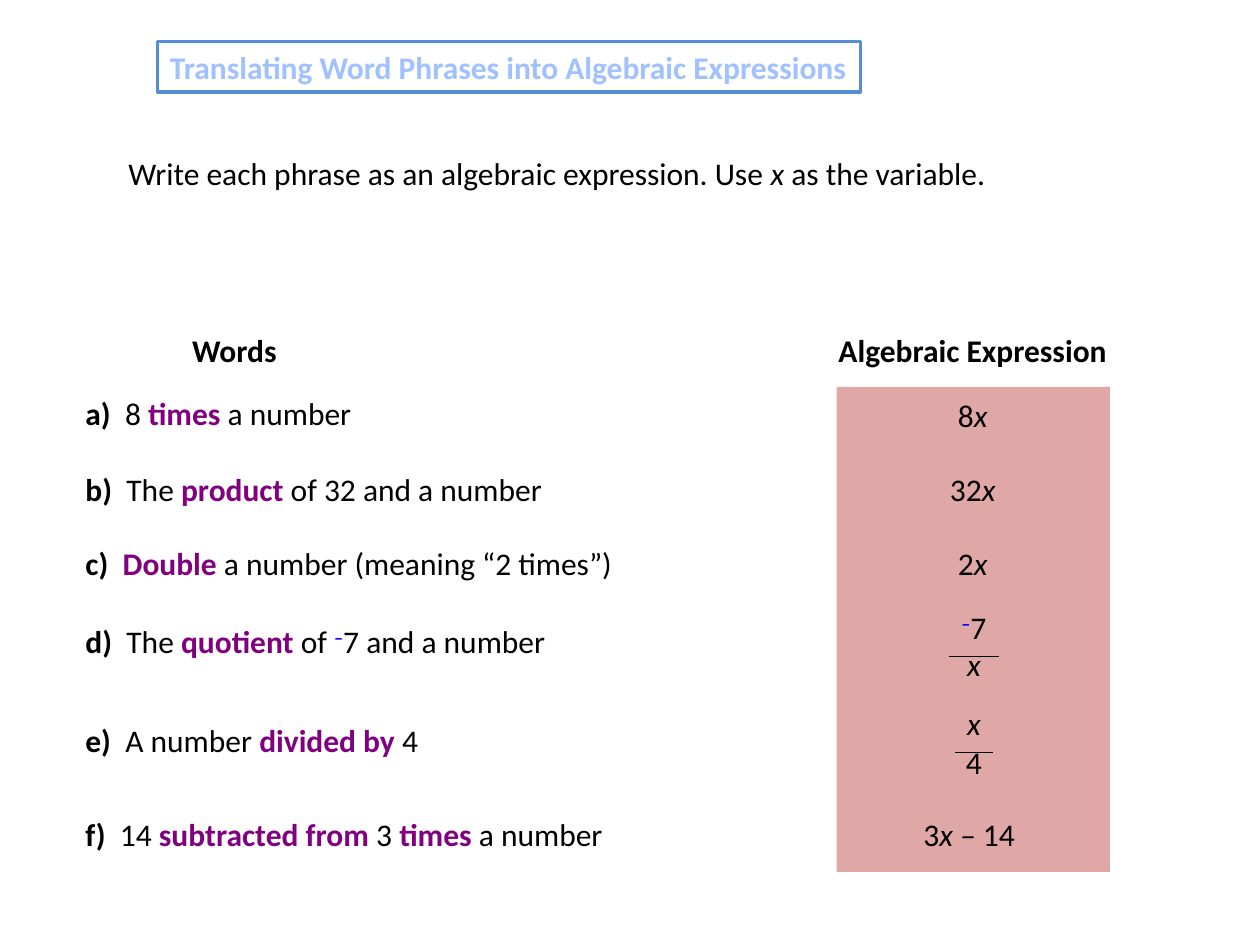
from collections import namedtuple

from lxml import etree
from pptx import Presentation
from pptx.dml.color import RGBColor
from pptx.enum.shapes import MSO_CONNECTOR as Connector, MSO_SHAPE as Shape
from pptx.enum.text import MSO_AUTO_SIZE as AutoSize, PP_ALIGN as Align
from pptx.oxml.ns import qn
from pptx.util import Inches, Pt

# The page is a grid of one-inch columns and rows.
COLUMNS, ROWS = 10, 7.5
Box = namedtuple("Box", "left top width height")

BLACK, PURPLE, BLUE = "000000", "800080", "0000FF"
STYLES = {
    "plain": {},
    "bold": {"bold": True},
    "key": {"bold": True, "color": PURPLE},
    "var": {"italic": True},
    "minus": {"bold": True, "color": BLUE, "raised": True},
    "title": {"bold": True, "color": "A0C1FF"},
}
NEGATIVE_SEVEN = [("–", "minus"), ("7", "plain")]

# Each phrase: its row on the grid, then the spans after its letter.
PHRASES = [
    (3.08, [("8 ", "plain"), ("times ", "key"), ("a number", "plain")]),
    (3.68, [("The ", "plain"), ("product", "key"),
            (" of 32 and a number", "plain")]),
    (4.27, [("Double", "key"), (" a number (meaning “2 times”)", "plain")]),
    (4.89, [("The ", "plain"), ("quotient ", "key"), ("of ", "plain"),
            ("–", "minus"), ("7 and a number", "plain")]),
    (5.67, [("A number ", "plain"), ("divided by ", "key"), ("4", "plain")]),
    (6.42, [("14 ", "plain"), ("subtracted from ", "key"), ("3 ", "plain"),
            ("times ", "key"), ("a number", "plain")]),
]
EXPRESSIONS = [
    (3.09, [("8", "plain"), ("x", "var")]),
    (3.68, [("32", "plain"), ("x", "var")]),
    (4.27, [("2", "plain"), ("x", "var")]),
    (6.42, [("3", "plain"), ("x –", "var"), (" 14 ", "plain")]),
]
# Each fraction: top row, bar row, denominator row, bar width, two parts.
FRACTIONS = [
    (4.78, 5.21, 5.07, 0.4, NEGATIVE_SEVEN, [("x", "var")]),
    (5.54, 5.97, 5.85, 0.3, [("x", "var")], [("4", "plain")]),
]


def rgb(value):
    return RGBColor.from_string(value)


def emu(box):
    return [Inches(length) for length in box]


def write_spans(para, spans):
    for text, style in spans:
        span = para.add_run()
        span.text = text
        look = {"name": "Calibri", "size": Pt(18), "bold": False,
                "italic": False, **STYLES[style]}
        span.font.color.rgb = rgb(look.pop("color", BLACK))
        if look.pop("raised", False):
            span.font._element.set("baseline", "30000")
        for name, value in look.items():
            setattr(span.font, name, value)


def add_text(shapes, box, spans, align=Align.LEFT):
    """Add one line of text with a hanging indent."""
    frame = shapes.add_textbox(*emu(box)).text_frame
    frame.word_wrap = True
    frame.auto_size = AutoSize.NONE
    para = frame.paragraphs[0]
    para.alignment = align
    props = para._p.get_or_add_pPr()
    props.set("marL", str(Inches(0.67)))
    props.set("indent", str(-Inches(0.67)))
    before = etree.SubElement(props, qn("a:spcBef"))
    etree.SubElement(before, qn("a:spcPct")).set("val", "20000")
    write_spans(para, spans)


def add_title(page, box):
    title = page.shapes.add_shape(Shape.RECTANGLE, *emu(box))
    title.shadow.inherit = False
    title.fill.solid()
    title.fill.fore_color.rgb = rgb("FFFFFF")
    title.line.color.rgb = rgb("558ED5")
    title.line.width = Pt(2)
    frame = title.text_frame
    frame.word_wrap = True
    frame.auto_size = AutoSize.SHAPE_TO_FIT_TEXT
    para = frame.paragraphs[0]
    para.alignment = Align.LEFT
    write_spans(para, [("Translating Word Phrases into Algebraic Expressions",
                        "title")])


def add_panel(page, box):
    panel = page.shapes.add_shape(Shape.RECTANGLE, *emu(box))
    panel.shadow.inherit = False
    panel.line.fill.background()
    panel.fill.solid()
    panel.fill.fore_color.rgb = rgb("C0504D")
    color = panel._element.spPr.find(".//" + qn("a:srgbClr"))
    etree.SubElement(color, qn("a:alpha")).set("val", "50000")


def add_fraction(page, center, fraction):
    top, bar_row, bottom, bar_width, numerator, denominator = fraction
    group = page.shapes.add_group_shape()
    for row, spans in ((top, numerator), (bottom, denominator)):
        add_text(group.shapes, Box(center - 0.385, row, 0.77, 0.61), spans,
                 Align.CENTER)
    ends = (center - bar_width / 2, bar_row, center + bar_width / 2, bar_row)
    bar = group.shapes.add_connector(Connector.STRAIGHT, *emu(ends))
    bar.line.color.rgb = rgb(BLACK)
    bar.line.width = Pt(0.75)
    etree.SubElement(bar._element.spPr, qn("a:effectLst"))


def add_words(page, box):
    """Place the heading and the lettered phrases in the left column."""
    add_text(page.shapes, Box(box.left - 0.16, box.top, 2.88, 0.48),
             [("Words", "bold")], Align.CENTER)
    for letter, (row, spans) in zip("abcdef", PHRASES):
        add_text(page.shapes, Box(box.left, row, box.width, 0.48),
                 [(f"{letter})  ", "bold"), *spans])


def add_expressions(page, box):
    """Place the panel, heading and answers in the right column."""
    center = box.left + box.width / 2
    add_panel(page, Box(center - 1.08, box.top + 0.49, 2.17, 3.85))
    add_text(page.shapes, Box(box.left, box.top, box.width, 0.48),
             [("Algebraic Expression", "bold")], Align.CENTER)
    for row, spans in EXPRESSIONS:
        add_text(page.shapes, Box(box.left, row, box.width, 0.48), spans,
                 Align.CENTER)
    for fraction in FRACTIONS:
        add_fraction(page, center + 0.01, fraction)


def main():
    deck = Presentation()
    deck.slide_width, deck.slide_height = Inches(COLUMNS), Inches(ROWS)
    page = deck.slides.add_slide(deck.slide_layouts[6])
    add_expressions(page, Box(6.28, 2.58, 2.88, 4.34))
    add_words(page, Box(0.58, 2.58, 4.8, 4.34))
    add_text(page.shapes, Box(0.92, 1.17, 7.25, 0.4),
             [("Write each phrase as an algebraic expression. Use ", "plain"),
              ("x", "var"), (" as the variable.", "plain")])
    add_title(page, Box(1.25, 0.33, 5.58, 0.4))
    deck.save("out.pptx")


if __name__ == "__main__":
    main()
